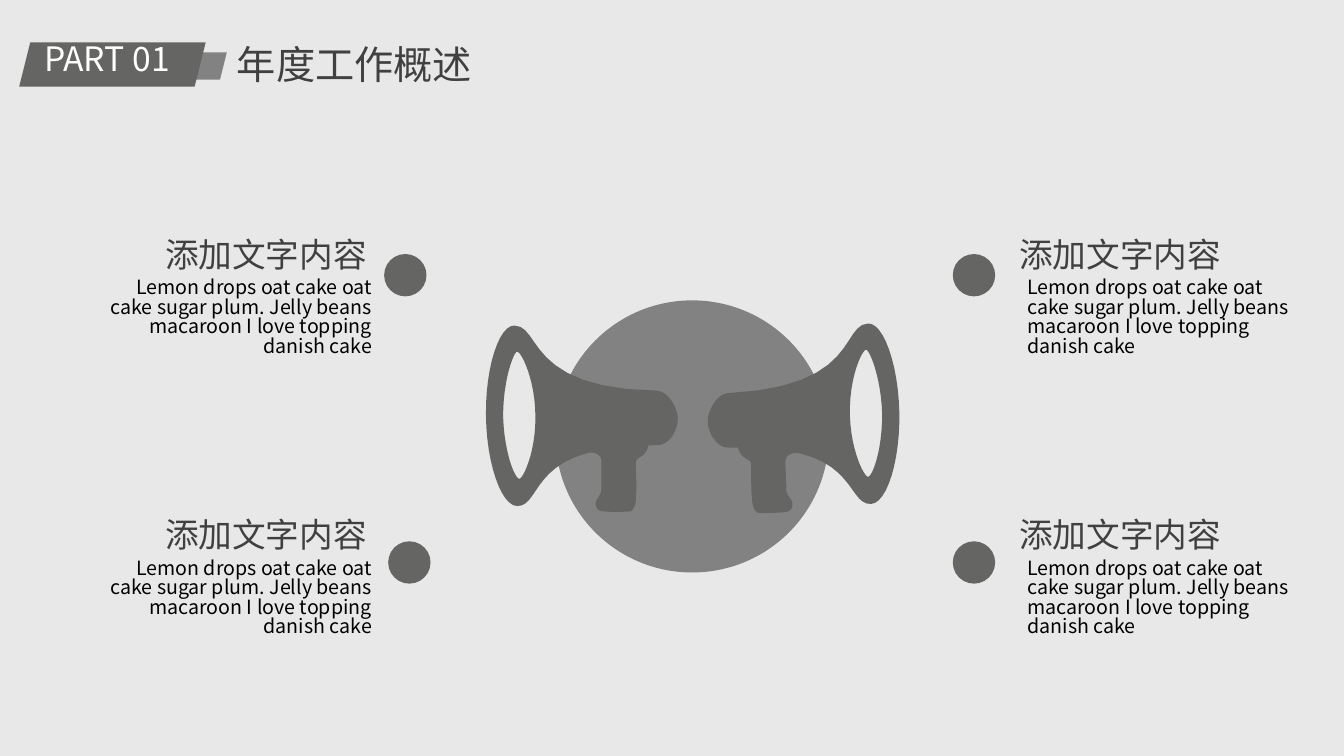
from lxml import etree
from pptx import Presentation
from pptx.dml.color import RGBColor
from pptx.enum.shapes import MSO_SHAPE
from pptx.enum.text import MSO_ANCHOR, MSO_AUTO_SIZE, PP_ALIGN
from pptx.oxml.ns import qn
from pptx.util import Inches, Pt

BACKGROUND = RGBColor(0xE8, 0xE8, 0xE8)
DARK = RGBColor(0x65, 0x65, 0x64)
MID = RGBColor(0x82, 0x82, 0x82)
HEADING = RGBColor(0x40, 0x40, 0x40)
WHITE = RGBColor(0xFF, 0xFF, 0xFF)
BLACK = RGBColor(0, 0, 0)
FONT = "Noto Sans CJK SC"
BODY = ("Lemon drops oat cake oat cake sugar plum. "
        "Jelly beans macaroon I love topping danish cake")

# Each contour: a start point, then cubic segments (two controls and an end).
BELL = [(8.61, 4.73),
        (8.58, 4.74, 8.44, 4.49, 8.43, 4.12), (8.42, 3.75, 8.55, 3.47, 8.59, 3.47),
        (8.62, 3.46, 8.74, 3.74, 8.75, 4.11), (8.75, 4.48, 8.65, 4.73, 8.61, 4.73)]
BODY_OUTLINE = [(8.92, 4.09),
                (8.91, 3.61, 8.76, 3.2, 8.61, 3.21), (8.34, 3.22, 8.52, 3.84, 7.22, 3.9),
                (7.11, 3.91, 7.02, 4.07, 7.02, 4.18), (7.02, 4.3, 7.12, 4.45, 7.23, 4.44),
                (7.25, 4.44, 7.32, 4.44, 7.32, 4.44), (7.35, 4.57, 7.45, 4.54, 7.45, 4.61),
                (7.45, 4.7, 7.45, 4.89, 7.46, 4.95), (7.46, 5.02, 7.49, 5.09, 7.53, 5.09),
                (7.58, 5.09, 7.72, 5.09, 7.78, 5.08), (7.84, 5.08, 7.86, 5.04, 7.86, 5),
                (7.86, 4.95, 7.8, 4.92, 7.8, 4.86), (7.8, 4.81, 7.79, 4.64, 7.79, 4.58),
                (7.79, 4.51, 7.86, 4.48, 7.94, 4.5), (8.47, 4.63, 8.44, 5.01, 8.64, 5),
                (8.8, 4.99, 8.93, 4.56, 8.92, 4.09)]
STEPS = 12

prs = Presentation()
prs.slide_width, prs.slide_height = Inches(13.33), Inches(7.5)
slide = prs.slides.add_slide(prs.slide_layouts[5])
slide.background.fill.solid()
slide.background.fill.fore_color.rgb = BACKGROUND
shapes = slide.shapes


def paint(sp, color):
    sp.shadow.inherit = False
    sp.fill.solid()
    sp.fill.fore_color.rgb = color
    sp.line.fill.background()


def write(sp, text, size, color, align=PP_ALIGN.LEFT):
    """Fill a text shape with one paragraph and return its text frame."""
    tf = sp.text_frame
    tf.word_wrap = True
    tf.auto_size = MSO_AUTO_SIZE.NONE
    tf.vertical_anchor = MSO_ANCHOR.TOP
    p = tf.paragraphs[0]
    p.text = text
    p.alignment = align
    p.font.size = Pt(size)
    p.font.color.rgb = color
    p.font.name = FONT
    defaults = p._p.pPr.find(qn("a:defRPr"))
    etree.SubElement(defaults, qn("a:ea")).set("typeface", FONT)
    return tf


# Header
for box, color in (((1.71, 0.52, 0.54, 0.27), MID), ((0.19, 0.42, 1.85, 0.44), DARK)):
    paint(shapes.add_shape(MSO_SHAPE.PARALLELOGRAM, *map(Inches, box)), color)
part = shapes.add_textbox(Inches(0.34), Inches(0.33), Inches(1.54), Inches(0.5))
write(part, "PART 01", 24, WHITE)
title = shapes.title
title.left, title.top = Inches(2.25), Inches(0.35)
title.width, title.height = Inches(3.82), Inches(0.57)
write(title, "年度工作概述", 28, HEADING)

# Disc and the four icon dots
for x, y, w, h, color in ((5.51, 2.98, 2.71, 2.7, MID),
                          (3.81, 2.52, 0.42, 0.42, DARK), (9.45, 2.52, 0.42, 0.42, DARK),
                          (3.85, 5.37, 0.42, 0.42, DARK), (9.45, 5.37, 0.42, 0.42, DARK)):
    paint(shapes.add_shape(MSO_SHAPE.OVAL, Inches(x), Inches(y), Inches(w), Inches(h)), color)

# Megaphones: the left one is the right one mirrored and slightly tilted
for mirrored in (False, True):
    contours = []
    for start, *segments in (BODY_OUTLINE, BELL):
        points = [start]
        for x1, y1, x2, y2, x3, y3 in segments:
            x0, y0 = points[-1]
            for i in range(1, STEPS + 1):
                t = i / STEPS
                a, b, c, d = (1 - t) ** 3, 3 * t * (1 - t) ** 2, 3 * t * t * (1 - t), t ** 3
                points.append((a * x0 + b * x1 + c * x2 + d * x3,
                               a * y0 + b * y1 + c * y2 + d * y3))
        if mirrored:
            points = [(13.74 - x + 0.032 * (y - 4.1), y + 0.032 * (x - 7.97))
                      for x, y in points]
        contours.append([(Inches(x), Inches(y)) for x, y in points])
    outline, bell = contours
    builder = shapes.build_freeform(*outline[0])
    builder.add_line_segments(outline[1:])
    builder.move_to(*bell[0])
    builder.add_line_segments(bell[1:])
    paint(builder.convert_to_shape(), DARK)

# Captions
for heading_x, body_x, heading, align in ((1.53, 1.08, "添加文字内容 ", PP_ALIGN.RIGHT),
                                          (10.01, 10.19, "添加文字内容", PP_ALIGN.LEFT)):
    for y in (2.27, 5.05):
        sp = shapes.add_textbox(Inches(heading_x), Inches(y), Inches(2.28), Inches(0.5))
        write(sp, heading, 24, HEADING, align)
        sp = shapes.add_textbox(Inches(body_x), Inches(y + 0.5), Inches(2.61), Inches(0.98))
        tf = write(sp, BODY, 14, BLACK, align)
        tf.margin_left = tf.margin_right = tf.margin_top = tf.margin_bottom = 0
        tf.paragraphs[0].line_spacing = 0.83

prs.save("out.pptx")
